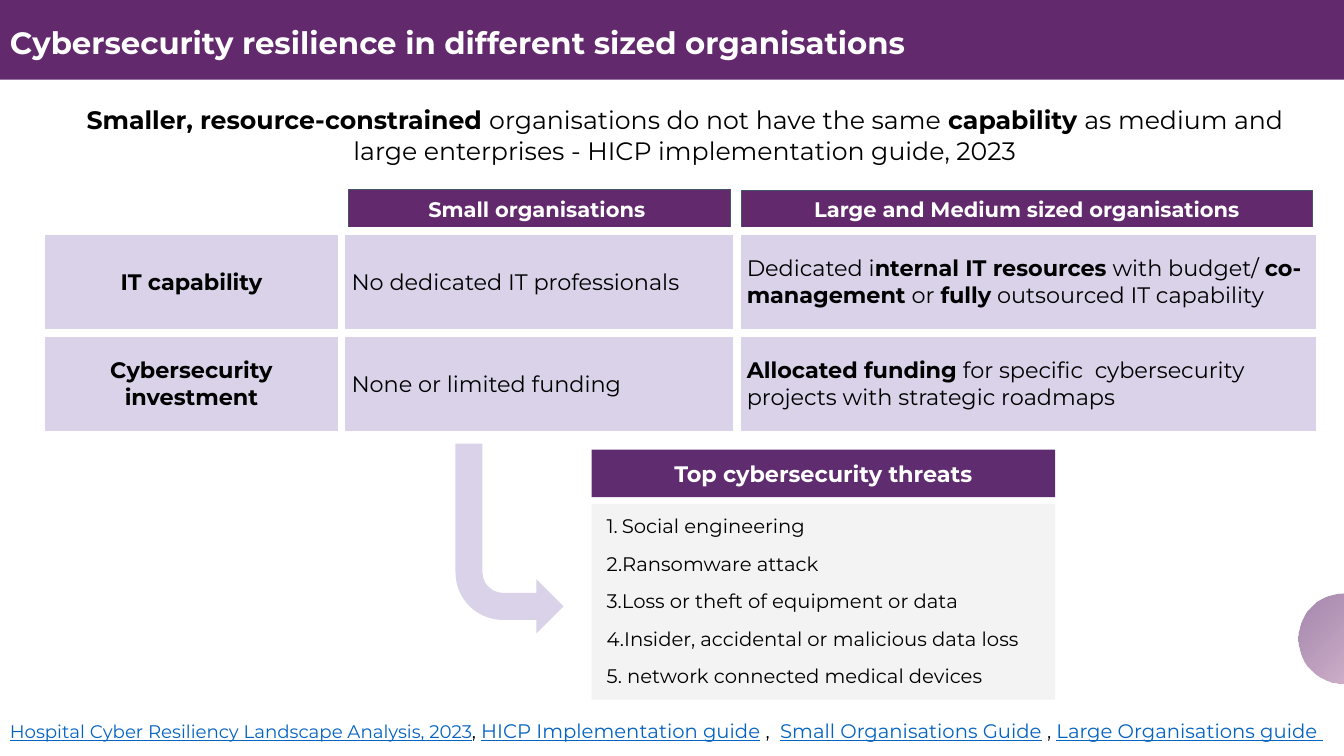
from lxml import etree
from pptx import Presentation
from pptx.dml.color import RGBColor as RGB
from pptx.enum.shapes import MSO_SHAPE as SHAPE
from pptx.enum.text import MSO_ANCHOR as ANCHOR, PP_ALIGN as ALIGN
from pptx.oxml import parse_xml
from pptx.oxml.ns import nsdecls, qn
from pptx.util import Cm, Pt


class Theme:
    font = "Montserrat"
    purple = RGB.from_string("62296D")
    plum = RGB.from_string("5F2D6F")
    lilac = RGB.from_string("D9D2E9")
    grey = RGB.from_string("F3F3F3")
    slate = RGB.from_string("44546A")
    link = RGB.from_string("0563C1")
    black = RGB.from_string("000000")
    white = RGB.from_string("FFFFFF")
    title, lead, body, header, small, source = (
        Pt(22), Pt(18), Pt(16), Pt(15), Pt(14), Pt(13))


def add_box(shape, left, top, width, height, fill, line=None):
    sp = s.shapes.add_shape(shape, Cm(left), Cm(top), Cm(width), Cm(height))
    sp.shadow.inherit = False
    sp.fill.solid()
    sp.fill.fore_color.rgb = fill
    if line is None:
        sp.line.fill.background()
    else:
        sp.line.color.rgb = line
        sp.line.width = Pt(0.75)
    tf = sp.text_frame
    tf.word_wrap = True
    tf.margin_left = tf.margin_right = tf.margin_top = tf.margin_bottom = Cm(0.25)
    return sp


def write(p, runs, size, color, align=ALIGN.LEFT):
    p.alignment = align
    for text, bold in runs:
        r = p.add_run()
        r.text = text
        r.font.name = Theme.font
        r.font.size = size
        r.font.bold = bold
        r.font.color.rgb = color


prs = Presentation()
prs.slide_width, prs.slide_height = Cm(33.87), Cm(19.05)
s = prs.slides.add_slide(prs.slide_layouts[6])

circle = add_box(SHAPE.OVAL, 32.72, 14.96, 2.26, 2.26, Theme.plum)
solid = circle._element.spPr.find(qn("a:solidFill"))
solid.getparent().replace(solid, parse_xml(
    f'<a:gradFill {nsdecls("a")}><a:gsLst>'
    '<a:gs pos="0"><a:srgbClr val="D3A5C3"><a:alpha val="71000"/></a:srgbClr></a:gs>'
    '<a:gs pos="100000"><a:srgbClr val="5F2D6F"><a:alpha val="56000"/></a:srgbClr></a:gs>'
    '</a:gsLst><a:path path="circle"><a:fillToRect l="100000" t="100000"/></a:path>'
    '</a:gradFill>'))

title = add_box(SHAPE.RECTANGLE, 0, 0, 33.87, 2.01, Theme.purple)
tf = title.text_frame
tf.vertical_anchor = ANCHOR.MIDDLE
tf.margin_top = tf.margin_bottom = Cm(0.13)
p = tf.paragraphs[0]
p.line_spacing = 1.15
p.space_after = Pt(12)
write(p, [("Cybersecurity resilience in different sized organisations", True)],
      Theme.title, Theme.white)

lead = s.shapes.add_textbox(Cm(1.93), Cm(2.39), Cm(30.66), Cm(2.06))
tf = lead.text_frame
tf.word_wrap = True
tf.margin_top = tf.margin_bottom = Cm(0.25)
write(tf.paragraphs[0], [
    ("Smaller, resource-constrained ", True),
    ("organisations do not have the same", False),
    (" capability ", True),
    ("as medium and large enterprises - HICP implementation guide, 2023", False),
], Theme.lead, Theme.black, ALIGN.CENTER)

headers = [
    ("Small organisations ", 8.79, 4.78, 9.63, 0.97, Theme.purple, Theme.slate, Theme.header),
    ("Large and Medium sized organisations", 18.69, 4.8, 14.38, 0.94,
     Theme.purple, Theme.slate, Theme.header),
    ("Top cybersecurity threats", 14.91, 11.33, 11.68, 1.2, Theme.plum, None, Theme.body),
]
for text, left, top, width, height, fill, line, size in headers:
    tf = add_box(SHAPE.RECTANGLE, left, top, width, height, fill, line).text_frame
    tf.vertical_anchor = ANCHOR.MIDDLE
    write(tf.paragraphs[0], [(text, True)], size, Theme.white, ALIGN.CENTER)

rows = [
    [[("IT capability", True)],
     [("No dedicated IT professionals", False)],
     [("Dedicated i", False), ("nternal IT resources", True), (" with budget/ ", False),
      ("co-management", True), (" or ", False), ("fully", True),
      (" outsourced IT capability", False)]],
    [[("Cybersecurity investment", True)],
     [("None or limited funding", False)],
     [("Allocated funding", True),
      (" for specific  cybersecurity projects with strategic roadmaps", False)]],
]
widths = [7.57, 9.96, 14.68]
row_height = 2.57
table = s.shapes.add_table(len(rows), len(widths), Cm(1.04), Cm(5.82),
                           Cm(sum(widths)), Cm(row_height * len(rows))).table
table.first_row = table.horz_banding = False
for column, width in zip(table.columns, widths):
    column.width = Cm(width)
for i, row in enumerate(rows):
    table.rows[i].height = Cm(row_height)
    for j, runs in enumerate(row):
        cell = table.cell(i, j)
        cell.vertical_anchor = ANCHOR.MIDDLE
        cell.margin_left = cell.margin_right = Cm(0.25)
        cell.margin_top = cell.margin_bottom = Cm(0.25)
        tcPr = cell._tc.get_or_add_tcPr()
        for side in ("lnL", "lnR", "lnT", "lnB"):
            tcPr.append(parse_xml(
                f'<a:{side} {nsdecls("a")} w="{Pt(6)}"><a:solidFill>'
                f'<a:srgbClr val="{Theme.white}"/></a:solidFill></a:{side}>'))
        cell.fill.solid()
        cell.fill.fore_color.rgb = Theme.lilac
        write(cell.text_frame.paragraphs[0], runs, Theme.body, Theme.black,
              ALIGN.LEFT if j else ALIGN.CENTER)

threats = [
    "Social engineering",
    "Ransomware attack",
    "Loss or theft of equipment or data",
    "Insider, accidental or malicious data loss",
    " network connected medical devices",
]
tf = add_box(SHAPE.RECTANGLE, 14.91, 12.7, 11.68, 4.93, Theme.grey).text_frame
tf.vertical_anchor = ANCHOR.TOP
for i, threat in enumerate(threats):
    p = tf.add_paragraph() if i else tf.paragraphs[0]
    pPr = p._p.get_or_add_pPr()
    pPr.set("marL", str(Cm(0.51)))
    pPr.set("indent", str(-Cm(0.38)))
    etree.SubElement(pPr, qn("a:buFont")).set("typeface", Theme.font)
    etree.SubElement(pPr, qn("a:buAutoNum")).set("type", "arabicPeriod")
    if i:
        p.space_before = Pt(10)
    write(p, [(threat, False)], Theme.small, Theme.black)

arrow = add_box(SHAPE.BENT_ARROW, 11.48, 11.18, 2.72, 4.78, Theme.lilac)
arrow.rotation = 180
arrow._element.spPr.xfrm.set("flipH", "1")
for i, value in enumerate([0.25, 0.25, 0.25, 0.44]):
    arrow.adjustments[i] = value

sources = [
    ("Hospital Cyber Resiliency Landscape Analysis, 2023", ", ", Theme.source),
    ("HICP Implementation guide", " ,  ", Theme.small),
    ("Small Organisations Guide", " , ", Theme.small),
    ("Large Organisations guide ", "", Theme.small),
]
tf = s.shapes.add_textbox(0, Cm(17.86), Cm(33.87), Cm(1.12)).text_frame
tf.word_wrap = True
tf.margin_top = tf.margin_bottom = Cm(0.25)
p = tf.paragraphs[0]
for name, separator, size in sources:
    write(p, [(name, False)], size, Theme.link)
    p.runs[-1].font.underline = True
    if separator:
        write(p, [(separator, False)], Theme.small, Theme.black)

prs.save("out.pptx")
